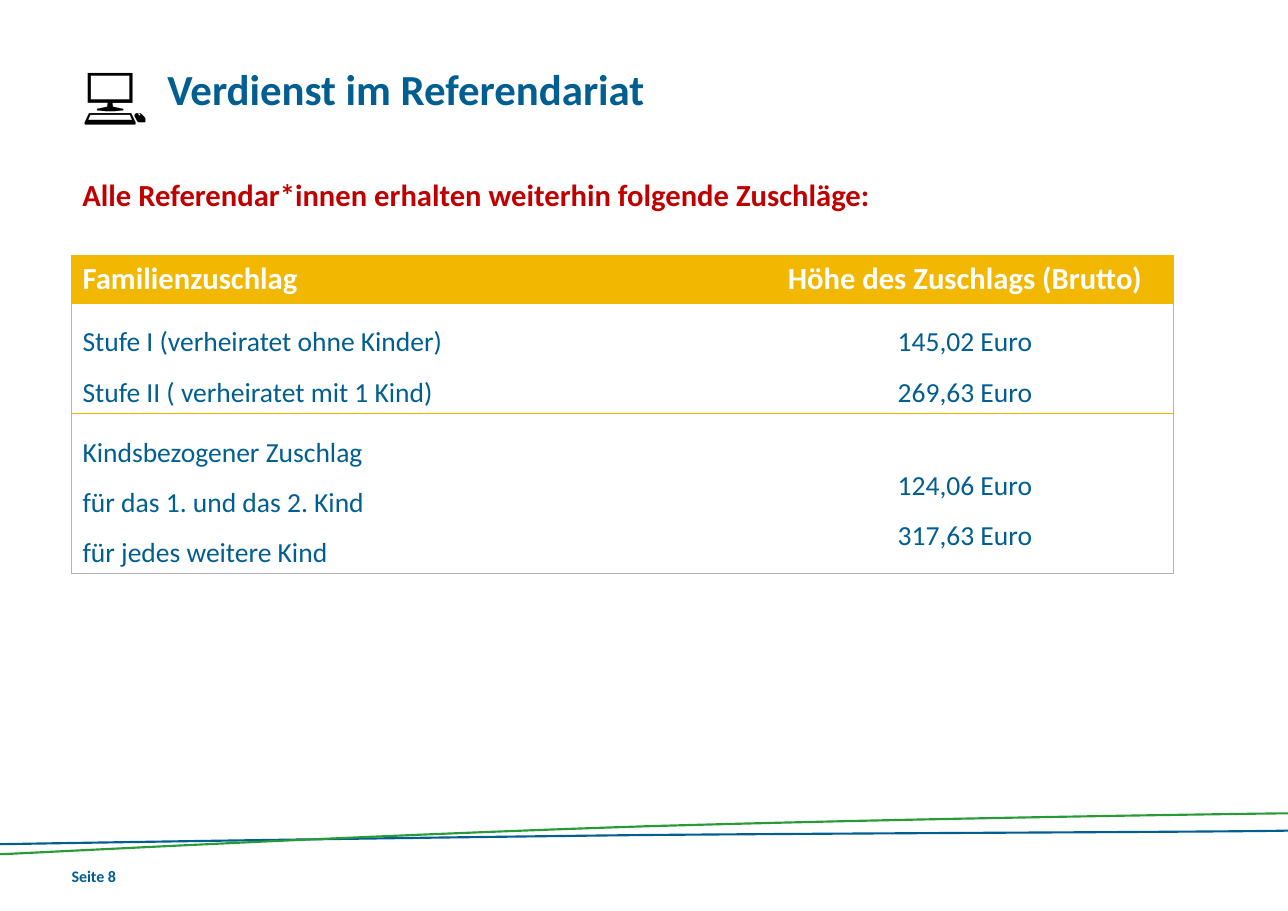
from lxml import etree
from pptx import Presentation
from pptx.dml.color import RGBColor
from pptx.enum.text import MSO_ANCHOR, MSO_AUTO_SIZE, PP_ALIGN
from pptx.oxml.ns import qn
from pptx.util import Cm, Pt

BLUE = RGBColor(0x00, 0x5E, 0x90)
GREEN = RGBColor(0x28, 0x9B, 0x38)
GOLD = RGBColor(0xF2, 0xB7, 0x00)
RED = RGBColor(0xC0, 0x00, 0x00)
GRAY = RGBColor(0xB2, 0xB2, 0xB2)
WHITE = RGBColor(0xFF, 0xFF, 0xFF)
BLACK = RGBColor(0x00, 0x00, 0x00)
FONT = "Calibri"
LEFT, CENTER = PP_ALIGN.LEFT, PP_ALIGN.CENTER
TOP = MSO_ANCHOR.TOP
NO_AUTOFIT = MSO_AUTO_SIZE.NONE

PAGE_WIDTH = 29.7
MARGIN = 1.65
COL_WIDTHS = (15.8, 9.6)
ROW_HEIGHTS = (1.11, 2.54, 3.66)
ROWS = (
    (("Familienzuschlag",), ("Höhe des Zuschlags (Brutto)",)),
    (("Stufe I (verheiratet ohne Kinder)", "Stufe II ( verheiratet mit 1 Kind)"),
     ("145,02 Euro", "269,63 Euro")),
    (("Kindsbezogener Zuschlag", "für das 1. und das 2. Kind", "für jedes weitere Kind"),
     ("124,06 Euro", "317,63 Euro")),
)

# Centre lines in cm: a start point, then two Bézier segments of three points
BLUE_WAVE = ((0.08, 19.46), (1.78, 19.43), (8.66, 19.32), (14.83, 19.25),
             (20.96, 19.20), (27.91, 19.18), (29.62, 19.15))
GREEN_WAVE = ((0.08, 19.69), (1.78, 19.61), (8.66, 19.25), (14.83, 19.05),
              (20.96, 18.87), (27.91, 18.77), (29.62, 18.75))
WAVE_HALF = 0.025
CURVE_STARTS = (1, 4, 10, 13)  # first control point of each curve in the outline


def style(p, size, color, bold=True):
    p.font.name = FONT
    p.font.size = Pt(size)
    p.font.bold = bold
    p.font.color.rgb = color


def set_margins(tf, size):
    tf.margin_left = tf.margin_top = tf.margin_right = tf.margin_bottom = Cm(size)


def add_text(s, box, text, size, color, wrap=True):
    sp = s.shapes.add_textbox(*(Cm(v) for v in box))
    tf = sp.text_frame
    tf.word_wrap = wrap
    tf.text = text
    style(tf.paragraphs[0], size, color)
    return tf


def bend(sp):
    """Turn the control points of the outline into Bézier curves."""
    segments = list(sp._element.iter(qn("a:lnTo")))
    for start in CURVE_STARTS:
        curve = etree.Element(qn("a:cubicBezTo"))
        segments[start].addprevious(curve)
        for segment in segments[start:start + 3]:
            curve.append(segment[0])
            segment.getparent().remove(segment)


def add_wave(s, points, color):
    line = [(0, points[0][1]), *points, (PAGE_WIDTH, points[-1][1])]
    outline = [(x, y - WAVE_HALF) for x, y in line]
    outline += [(x, y + WAVE_HALF) for x, y in reversed(line)]
    outline = [(Cm(x), Cm(y)) for x, y in outline]
    builder = s.shapes.build_freeform(*outline[0])
    builder.add_line_segments(outline[1:], close=True)
    sp = builder.convert_to_shape()
    bend(sp)
    sp.shadow.inherit = False
    sp.fill.solid()
    sp.fill.fore_color.rgb = color
    sp.line.fill.background()


def set_borders(cell, **colors):
    tcPr = cell._tc.get_or_add_tcPr()
    for side in "LRTB":
        ln = etree.SubElement(tcPr, qn(f"a:ln{side}"), w=str(Pt(0.5)))
        if side in colors:
            fill = etree.SubElement(ln, qn("a:solidFill"))
            etree.SubElement(fill, qn("a:srgbClr"), val=str(colors[side]))
        else:
            etree.SubElement(ln, qn("a:noFill"))


def fill_cell(cell, lines, row, col):
    header = row == 0
    last = row == len(ROWS) - 1
    side = "R" if col else "L"
    set_borders(cell, **{side: GOLD if header else GRAY,
                         "T": GOLD, "B": GRAY if last else GOLD})
    if header:
        cell.fill.solid()
        cell.fill.fore_color.rgb = GOLD
    else:
        cell.fill.background()
    cell.vertical_anchor = TOP
    cell.text_frame.text = "\n".join(lines)
    for p in cell.text_frame.paragraphs:
        p.alignment = CENTER if col else LEFT
        if header:
            style(p, 20, WHITE)
        else:
            p.line_spacing = 1.5
            style(p, 18, BLUE, bold=False)


def add_allowance_table(s):
    frame = s.shapes.add_table(len(ROWS), len(COL_WIDTHS), Cm(MARGIN), Cm(5.88),
                               Cm(sum(COL_WIDTHS)), Cm(sum(ROW_HEIGHTS)))
    table = frame.table
    table.horz_banding = False
    for column, width in zip(table.columns, COL_WIDTHS):
        column.width = Cm(width)
    for r, (row, height) in enumerate(zip(ROWS, ROW_HEIGHTS)):
        table.rows[r].height = Cm(height)
        for c, lines in enumerate(row):
            fill_cell(table.cell(r, c), lines, r, c)
    # The child amounts start below the heading line beside them
    table.cell(2, 1).margin_top = Cm(0.9)


def set_title(s, text):
    sp = s.shapes.title
    sp.left, sp.top, sp.width, sp.height = Cm(3.86), Cm(1.45), Cm(22.4), Cm(1.6)
    tf = sp.text_frame
    tf.text = text
    tf.vertical_anchor = TOP
    tf.auto_size = NO_AUTOFIT
    set_margins(tf, 0)
    p = tf.paragraphs[0]
    p.alignment = LEFT
    style(p, 28, BLUE)


def main():
    prs = Presentation()
    prs.slide_width, prs.slide_height = Cm(PAGE_WIDTH), Cm(21)
    s = prs.slides.add_slide(prs.slide_layouts[5])

    # Footer
    tf = add_text(s, (MARGIN, 19.98, 1.8, 0.64), "Seite 8", 10.5, BLUE, wrap=False)
    set_margins(tf, 0)
    add_wave(s, BLUE_WAVE, BLUE)
    add_wave(s, GREEN_WAVE, GREEN)

    # Heading
    set_title(s, "Verdienst im Referendariat")
    add_text(s, (MARGIN, 1.12, 2.2, 1.96), "💻", 40, BLACK)

    # Allowances
    add_allowance_table(s)
    add_text(s, (MARGIN, 3.93, 21, 1.12),
             "Alle Referendar*innen erhalten weiterhin folgende Zuschläge:", 20, RED)

    prs.save("out.pptx")


if __name__ == "__main__":
    main()
